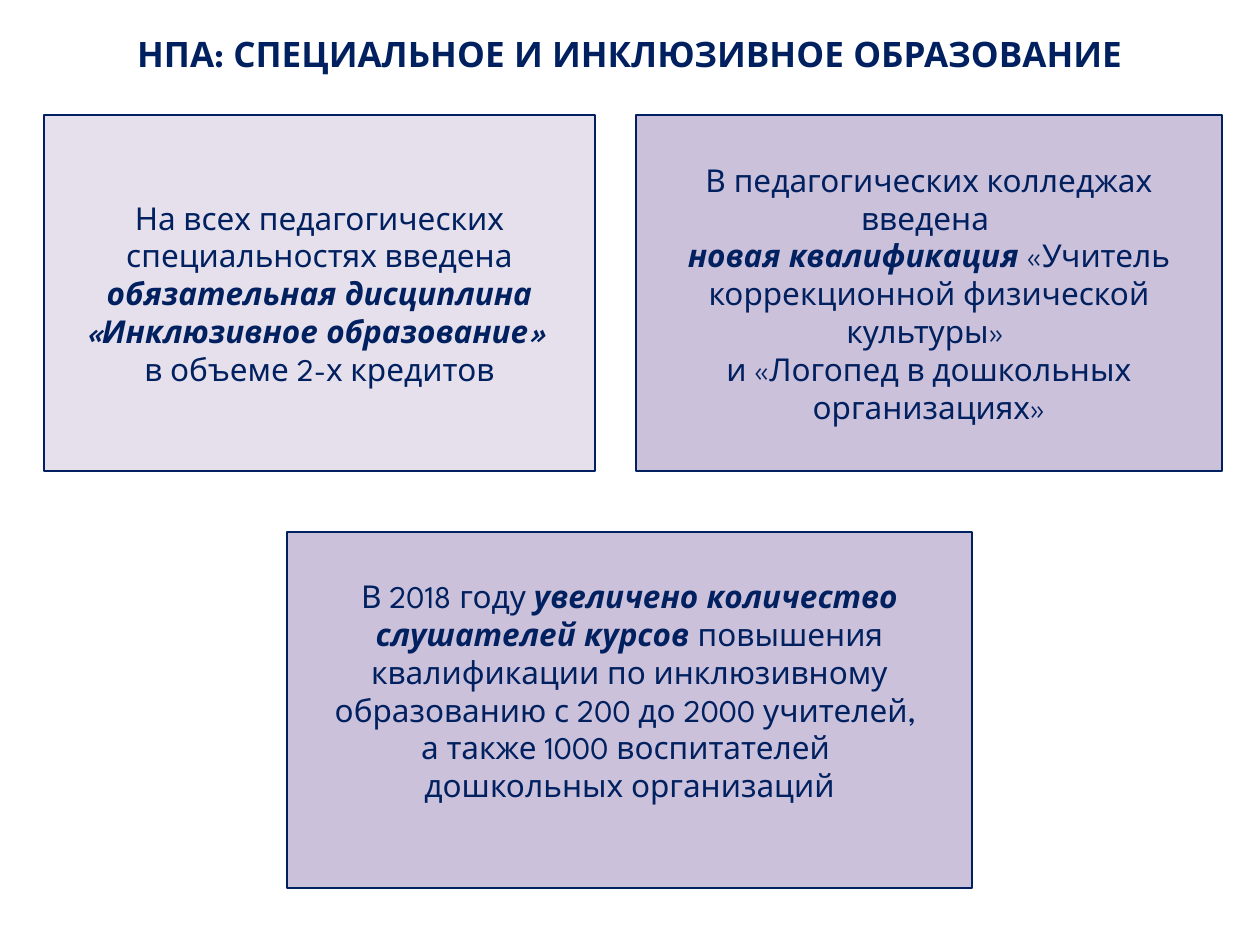
from dataclasses import dataclass

from pptx import Presentation
from pptx import util as u
from pptx.dml.color import RGBColor
from pptx.enum import shapes, text

PX = 914400 / 126
NAVY, LILAC, PALE, WHITE = "002060", "CCC1DA", "E6E0EC", "FFFFFF"
FONT = "League Spartan"


@dataclass
class Card:
    """A filled box whose paragraphs are lists of (words, strong) runs."""
    x: int
    y: int
    w: int
    fill: str
    paras: list
    foot: int = 6
    h: int = 356


CARDS = [
    Card(44, 115, 551, PALE, [
        [("На всех педагогических специальностях введена ", False),
         ("обязательная дисциплина «Инклюзивное образование» ", True)],
        [("в объеме 2-х кредитов", False)]]),
    Card(636, 115, 586, LILAC, [
        [("В педагогических колледжах введена ", False)],
        [("новая квалификация ", True),
         ("«Учитель коррекционной физической культуры» ", False)],
        [("и «Логопед в дошкольных организациях»", False)]]),
    Card(287, 532, 685, LILAC, [
        [("В 2018 году ", False),
         ("увеличено количество слушателей курсов ", True),
         ("повышения квалификации по инклюзивному образованию "
          "с 200 до 2000 учителей, ", False)],
        [("а также 1000 воспитателей ", False)],
        [("дошкольных организаций", False)]], foot=45),
]


def px(n: int) -> u.Emu:
    return u.Emu(round(n * PX))


def tint(code: str) -> RGBColor:
    return RGBColor.from_string(code)


def write(para, words: str, size: int = 18, bold: bool = False,
          slant: bool = False, hue: str = NAVY) -> None:
    para.alignment = text.PP_ALIGN.CENTER
    run = para.add_run()
    run.text = words
    font = run.font
    font.name, font.size = FONT, u.Pt(size)
    font.bold, font.italic = bold, slant
    font.color.rgb = tint(hue)


def paint(shape, fill: str, edge: str) -> None:
    shape.fill.solid()
    shape.fill.fore_color.rgb = tint(fill)
    shape.line.color.rgb = tint(edge)
    shape.line.width = u.Pt(0.75)


def setup(frame, foot: int = 6) -> None:
    frame.word_wrap = True
    frame.auto_size = text.MSO_AUTO_SIZE.NONE
    frame.vertical_anchor = text.MSO_ANCHOR.MIDDLE
    frame.margin_top, frame.margin_bottom = px(6), px(foot)


def head(slide, words: str) -> None:
    title = slide.shapes.title
    title.left, title.top, title.width, title.height = map(px, (44, 26, 1171, 55))
    paint(title, WHITE, WHITE)
    setup(title.text_frame)
    write(title.text_frame.paragraphs[0], words, size=20, bold=True)


def draw(slide, card: Card) -> None:
    box = slide.shapes.add_shape(
        shapes.MSO_SHAPE.RECTANGLE, *map(px, (card.x, card.y, card.w, card.h)))
    box.shadow.inherit = False
    paint(box, card.fill, NAVY)
    frame = box.text_frame
    setup(frame, card.foot)
    for i, runs in enumerate(card.paras):
        para = frame.add_paragraph() if i else frame.paragraphs[0]
        for words, strong in runs:
            write(para, words, bold=strong, slant=strong)


def main() -> None:
    deck = Presentation()
    deck.slide_width, deck.slide_height = px(1260), px(945)
    slide = deck.slides.add_slide(deck.slide_layouts[5])
    head(slide, "НПА: СПЕЦИАЛЬНОЕ И ИНКЛЮЗИВНОЕ ОБРАЗОВАНИЕ")
    for card in CARDS:
        draw(slide, card)
    deck.save("out.pptx")


if __name__ == "__main__":
    main()
